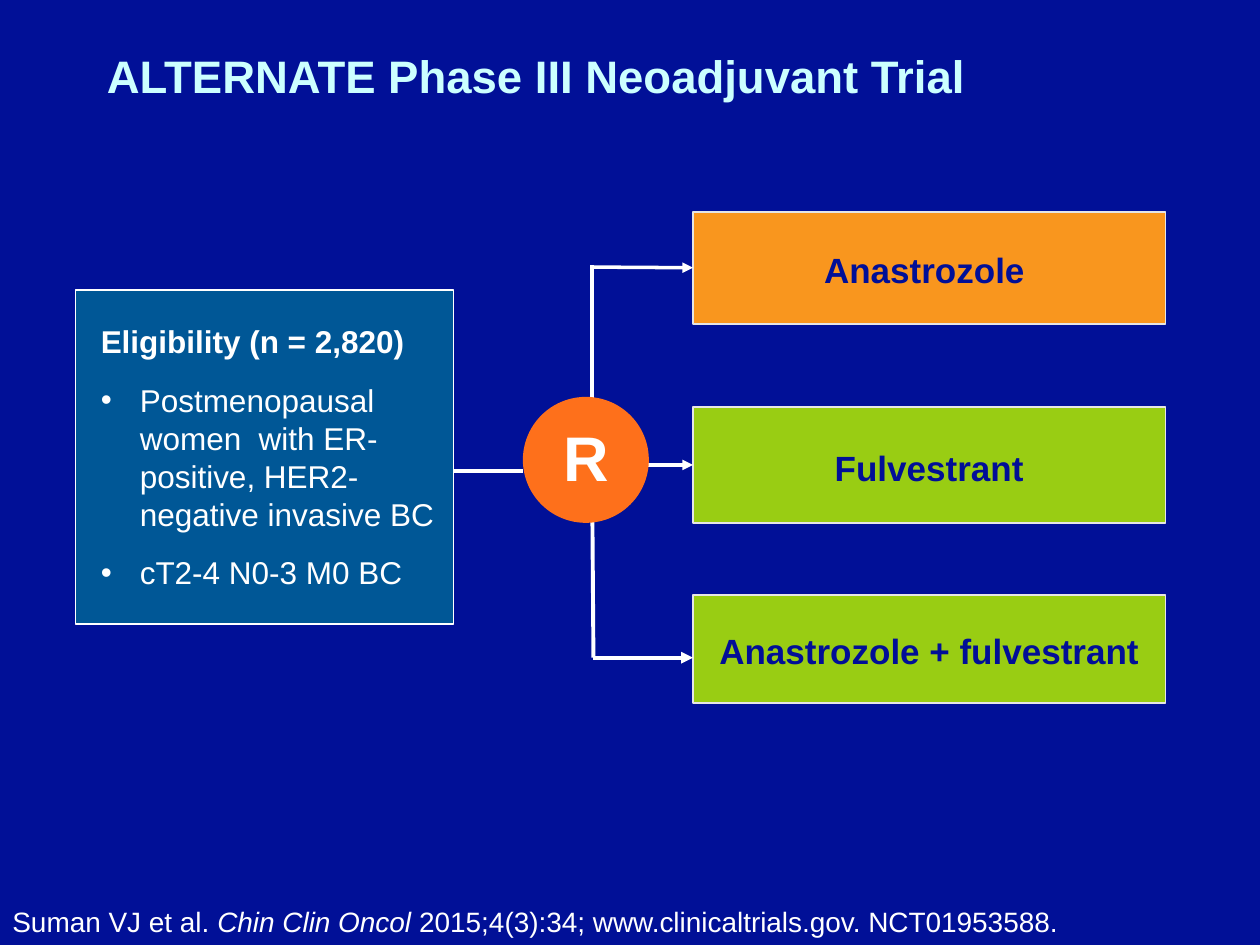
from lxml import etree
from pptx import Presentation
from pptx.dml.color import RGBColor
from pptx.enum.shapes import MSO_CONNECTOR, MSO_SHAPE
from pptx.enum.text import MSO_ANCHOR, PP_ALIGN
from pptx.oxml.ns import qn
from pptx.util import Inches, Pt

RECT, OVAL = MSO_SHAPE.RECTANGLE, MSO_SHAPE.OVAL
STRAIGHT = MSO_CONNECTOR.STRAIGHT
LEFT, CENTER = PP_ALIGN.LEFT, PP_ALIGN.CENTER
TOP, MIDDLE = MSO_ANCHOR.TOP, MSO_ANCHOR.MIDDLE
LEFT_SIDE = 1

COLORS = {
    "background": "011097",
    "white": "FFFFFF",
    "title": "CCFFFF",
    "eligibility": "005796",
    "orange": "F9961E",
    "green": "99CD13",
    "arm_line": "E6E6E6",
    "arm_text": "010F97",
    "randomize": "FE701B",
}
INSETS = (0.1, 0.05, 0.1, 0.05)


def rgb(name):
    return RGBColor.from_string(COLORS[name])


def set_frame(tf, anchor=MIDDLE, insets=INSETS):
    tf.word_wrap = True
    tf.vertical_anchor = anchor
    for side, value in zip(("left", "top", "right", "bottom"), insets):
        setattr(tf, f"margin_{side}", Inches(value))


def add_paragraph(tf, runs, size, color, first=True, **formats):
    p = tf.paragraphs[0] if first else tf.add_paragraph()
    for name, value in {"alignment": LEFT, **formats}.items():
        setattr(p, name, value)
    for text, style in runs:
        r = p.add_run()
        r.text = text
        r.font.color.rgb = rgb(color)
        for name, value in {"name": "Arial", "size": Pt(size), **style}.items():
            setattr(r.font, name, value)
    return p


def add_bullet(p, indent):
    pPr = p._p.get_or_add_pPr()
    pPr.set("marL", str(Inches(indent)))
    pPr.set("indent", str(Inches(-indent)))
    etree.SubElement(pPr, qn("a:buFont")).set("typeface", "Arial")
    etree.SubElement(pPr, qn("a:buChar")).set("char", "•")


def add_textbox(s, box, anchor):
    tf = s.shapes.add_textbox(*map(Inches, box)).text_frame
    set_frame(tf, anchor)
    return tf


def add_box(s, kind, box, fill, line=None, insets=INSETS):
    sp = s.shapes.add_shape(kind, *map(Inches, box))
    sp.shadow.inherit = False
    sp.fill.solid()
    sp.fill.fore_color.rgb = rgb(fill)
    if line:
        sp.line.color.rgb = rgb(line)
        sp.line.width = Pt(1)
    else:
        sp.line.fill.background()
    set_frame(sp.text_frame, insets=insets)
    return sp


def add_line(s, start, end, width=2.25, arrow=False, target=None):
    c = s.shapes.add_connector(STRAIGHT, *map(Inches, (*start, *end)))
    c.line.color.rgb = rgb("white")
    c.line.width = Pt(width)
    if arrow:
        etree.SubElement(c.line._get_or_add_ln(), qn("a:tailEnd")).set("type", "triangle")
    etree.SubElement(c._element.spPr, qn("a:effectLst"))
    if target:
        c.end_connect(target, LEFT_SIDE)


def add_arm(s, text, top, height, fill):
    sp = add_box(s, RECT, (5.5, top, 3.75, height), fill, "arm_line")
    add_paragraph(sp.text_frame, [(text, {"bold": True})], 20, "arm_text",
                  alignment=CENTER, line_spacing=1.1)
    return sp


def add_eligibility(s):
    sp = add_box(s, RECT, (0.6, 2.3, 3, 2.65), "eligibility", "white", (0.2, 0.2, 0.1, 0.2))
    spacing = {"space_before": Pt(6), "space_after": Pt(6)}
    add_paragraph(sp.text_frame, [("Eligibility (n = 2,820)", {"bold": True})],
                  18, "white", **spacing)
    for text in ("Postmenopausal women  with ER-positive, HER2-negative invasive BC",
                 "cT2-4 N0-3 M0 BC"):
        p = add_paragraph(sp.text_frame, [(text, {})], 18, "white", first=False, **spacing)
        add_bullet(p, 0.31)


def main():
    prs = Presentation()
    prs.slide_width, prs.slide_height = Inches(10), Inches(7.5)
    s = prs.slides.add_slide(prs.slide_layouts[6])
    s.background.fill.solid()
    s.background.fill.fore_color.rgb = rgb("background")

    title = add_textbox(s, (0.75, 0, 8.5, 1.25), MIDDLE)
    add_paragraph(title, [("ALTERNATE Phase III Neoadjuvant Trial", {"bold": True})],
                  26, "title", line_spacing=0.9)
    citation = add_textbox(s, (0, 7.13, 9.78, 0.37), TOP)
    add_paragraph(citation, [
        ("Suman VJ et al. ", {}),
        ("Chin Clin Oncol ", {"italic": True}),
        ("2015;4(3):34; www.clinicaltrials.gov. NCT01953588.", {}),
    ], 16, "white")

    add_eligibility(s)
    anastrozole = add_arm(s, "Anastrozole ", 1.68, 0.89, "orange")
    fulvestrant = add_arm(s, "Fulvestrant", 3.23, 0.92, "green")
    add_arm(s, "Anastrozole + fulvestrant", 4.72, 0.86, "green")

    add_line(s, (3.6, 3.74), (4.15, 3.74))
    add_line(s, (4.7, 3.62), (4.7, 2.1))
    add_line(s, (4.7, 3.9), (4.71, 5.22))
    add_line(s, (4.71, 2.12), (5.5, 2.12), 2, True, anastrozole)
    add_line(s, (4.91, 3.69), (5.5, 3.69), 2, True, fulvestrant)
    add_line(s, (4.71, 5.22), (5.5, 5.22), arrow=True)

    randomize = add_box(s, OVAL, (4.15, 3.15, 1, 1), "randomize", insets=(0, 0, 0, 0.05))
    add_paragraph(randomize.text_frame, [("R", {"bold": True})], 36, "white", alignment=CENTER)

    prs.save("out.pptx")


if __name__ == "__main__":
    main()
